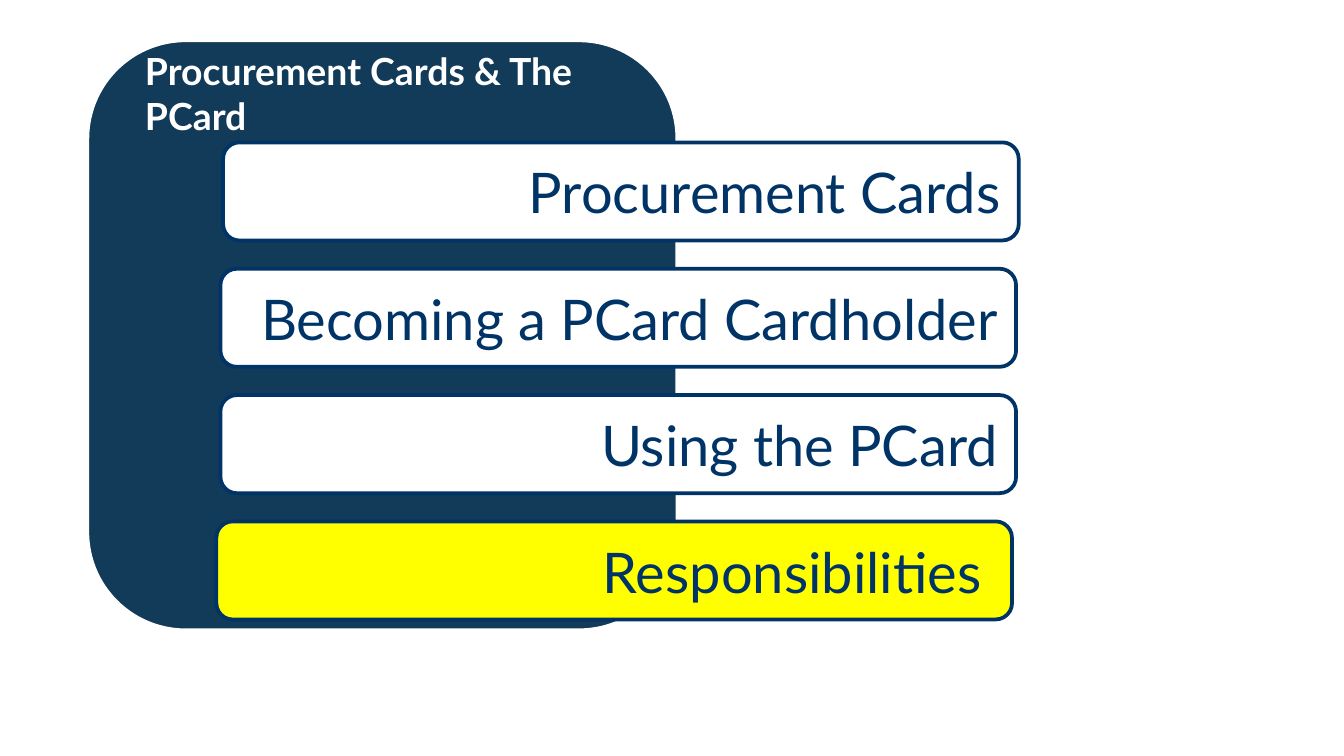
from dataclasses import dataclass

from pptx import Presentation
from pptx.dml.color import RGBColor
from pptx.enum.shapes import MSO_SHAPE as Preset
from pptx.enum.text import MSO_ANCHOR as Anchor, PP_ALIGN as Align
from pptx.shapes.autoshape import Shape
from pptx.slide import Slide
from pptx.util import Inches, Pt

COLORS = {"panel": "123A59", "navy": "003366", "white": "FFFFFF", "highlight": "FFFF00"}
FONT = "Lato"
SLIDE_WIDTH = 10
SLIDE_HEIGHT = SLIDE_WIDTH * 9 / 16
CARD_WIDTH, CARD_HEIGHT = 5.92, 0.73


@dataclass
class Box:
    left: float
    top: float
    width: float
    height: float

    def lengths(self) -> list[int]:
        return [Inches(n) for n in (self.left, self.top, self.width, self.height)]


@dataclass
class Topic:
    title: str
    left: float
    top: float


def rgb(name: str) -> RGBColor:
    return RGBColor.from_string(COLORS[name])


def add_block(slide: Slide, preset: Preset, box: Box, fill: str, line: str) -> Shape:
    block = slide.shapes.add_shape(preset, *box.lengths())
    block.shadow.inherit = False
    block.fill.solid()
    block.fill.fore_color.rgb = rgb(fill)
    block.line.color.rgb = rgb(line)
    block.line.width = Pt(2)
    return block


def add_card(slide: Slide, topic: Topic, fill: str = "white") -> Shape:
    box = Box(topic.left, topic.top, CARD_WIDTH, CARD_HEIGHT)
    return add_block(slide, Preset.ROUNDED_RECTANGLE, box, fill, "navy")


def write_text(holder: Shape, text: str, size: int, color: str, align: Align,
               inset_x: float, inset_y: float, bold: bool = False) -> None:
    frame = holder.text_frame
    frame.word_wrap = True
    frame.vertical_anchor = Anchor.MIDDLE
    frame.margin_left = frame.margin_right = Inches(inset_x)
    frame.margin_top = frame.margin_bottom = Inches(inset_y)
    line = frame.paragraphs[0]
    line.text = text
    line.alignment = align
    line.font.name = FONT
    line.font.size = Pt(size)
    line.font.bold = bold
    line.font.color.rgb = rgb(color)


TOPICS = [
    Topic("Procurement Cards", 1.66, 1.06),
    Topic("Becoming a PCard Cardholder", 1.64, 2),
    Topic("Using the PCard", 1.64, 2.94),
]
CURRENT = Topic("Responsibilities ", 1.61, 3.88)


def main() -> None:
    deck = Presentation()
    deck.slide_width, deck.slide_height = Inches(SLIDE_WIDTH), Inches(SLIDE_HEIGHT)
    slide = deck.slides.add_slide(deck.slide_layouts[6])

    add_block(slide, Preset.FLOWCHART_ALTERNATE_PROCESS,
              Box(0.65, 0.3, 4.39, 4.39), "panel", "white")

    add_card(slide, CURRENT, "highlight")
    current_label = slide.shapes.add_textbox(*Box(1.71, 3.81, 5.82, 0.94).lengths())
    write_text(current_label, CURRENT.title, 30, "navy", Align.RIGHT, 0.12, 0.12)
    current_label.text_frame.paragraphs[0].line_spacing = 0.9

    heading = slide.shapes.add_textbox(*Box(0.98, 0.33, 4.02, 0.73).lengths())
    write_text(heading, "Procurement Cards & The PCard", 20, "white",
               Align.LEFT, 0.1, 0.05, bold=True)

    for topic in TOPICS:
        write_text(add_card(slide, topic), topic.title, 30, "navy", Align.RIGHT, 0.1, 0.1)

    deck.save("out.pptx")


if __name__ == "__main__":
    main()
